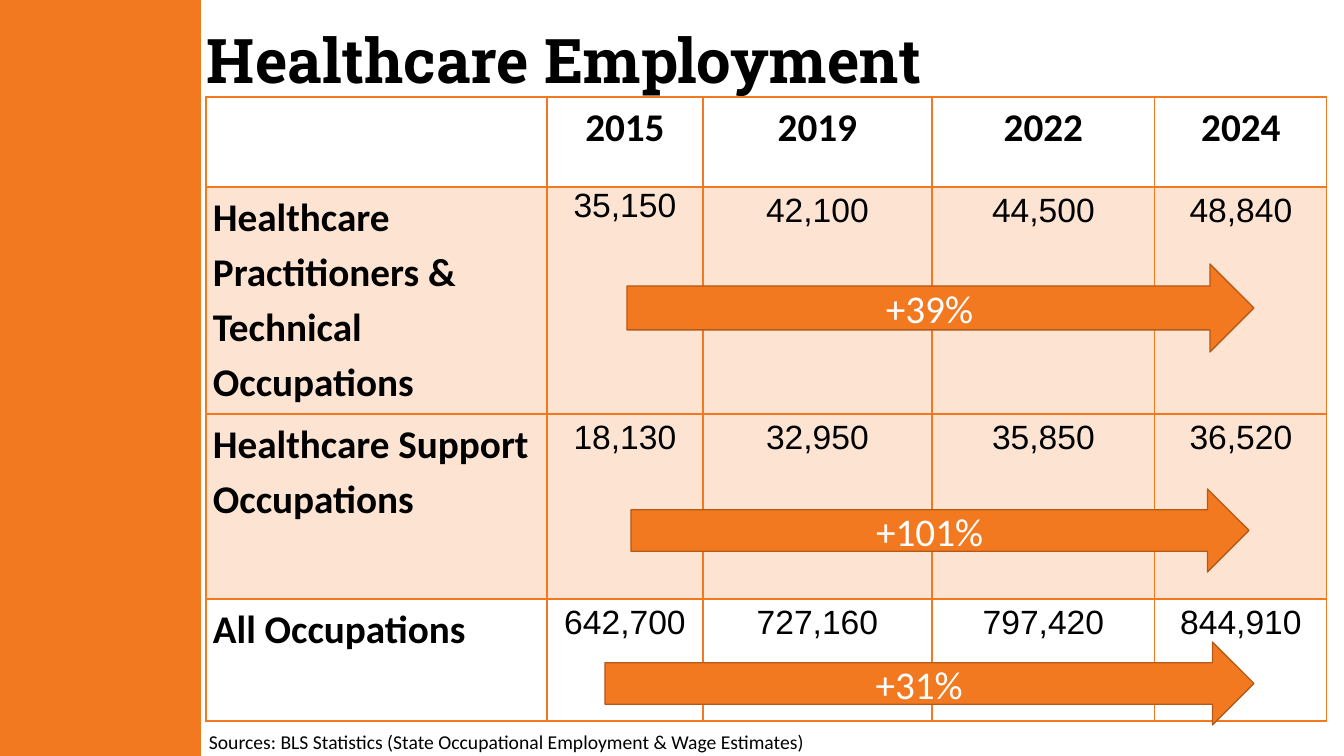
import lxml.etree
import pptx
import pptx.dml.color
import pptx.enum.shapes
import pptx.enum.text
import pptx.oxml.ns
import pptx.util

EMU_PER_PX = 914400 / 100.8
ORANGE, DARK_ORANGE, PEACH = "F37920", "B45A18", "FDE4D2"
BLACK, WHITE = "000000", "FFFFFF"
CENTER = pptx.enum.text.PP_ALIGN.CENTER
LEFT = pptx.enum.text.PP_ALIGN.LEFT
MIDDLE = pptx.enum.text.MSO_ANCHOR.MIDDLE
TOP = pptx.enum.text.MSO_ANCHOR.TOP
SHAPES = pptx.enum.shapes.MSO_SHAPE


def px(length):
    return pptx.util.Emu(round(length * EMU_PER_PX))


def color(value):
    return pptx.dml.color.RGBColor.from_string(value)


class SlideBuilder:
    def __init__(self, slide, font="Calibri"):
        self.slide = slide
        self.font = font

    def set_text(self, frame, text, size, font=None, bold=False, ink=BLACK,
                 align=LEFT, spacing=1.0):
        paragraph = frame.paragraphs[0]
        paragraph.text = text
        paragraph.alignment = align
        paragraph.line_spacing = spacing
        paragraph.font.name = font or self.font
        paragraph.font.size = pptx.util.Pt(size)
        paragraph.font.bold = bold
        paragraph.font.color.rgb = color(ink)

    def text(self, bounds, text, size, anchor=TOP, **style):
        box = self.slide.shapes.add_textbox(*map(px, bounds))
        box.text_frame.word_wrap = True
        box.text_frame.vertical_anchor = anchor
        self.set_text(box.text_frame, text, size, **style)

    def shape(self, kind, bounds, fill, line=None):
        shape = self.slide.shapes.add_shape(kind, *map(px, bounds))
        shape.shadow.inherit = False
        shape.fill.solid()
        shape.fill.fore_color.rgb = color(fill)
        if line:
            shape.line.color.rgb = color(line)
            shape.line.width = pptx.util.Pt(1)
        else:
            shape.line.fill.background()
        return shape

    def growth_arrow(self, bounds, label):
        arrow = self.shape(SHAPES.RIGHT_ARROW, bounds, ORANGE, DARK_ORANGE)
        arrow.text_frame.vertical_anchor = MIDDLE
        self.set_text(arrow.text_frame, label, 28, ink=WHITE, align=CENTER)

    def borders(self, cell, **widths):
        properties = cell._tc.get_or_add_tcPr()
        qn = pptx.oxml.ns.qn
        # Border lines come before the fill in the cell properties
        for index, (side, width) in enumerate(widths.items()):
            line = lxml.etree.Element(qn(f"a:ln{side}"),
                                      w=str(int(pptx.util.Pt(width))))
            fill = lxml.etree.SubElement(line, qn("a:solidFill"))
            lxml.etree.SubElement(fill, qn("a:srgbClr"), val=ORANGE)
            properties.insert(index, line)

    def table(self, left, top, widths, heights, rows, fills):
        bounds = left, top, sum(widths), sum(heights)
        table = self.slide.shapes.add_table(
            len(rows), len(widths), *map(px, bounds)).table
        table.first_row = table.horz_banding = False
        for column, width in zip(table.columns, widths):
            column.width = px(width)
        for row, height in zip(table.rows, heights):
            row.height = px(height)
        for r, (values, fill) in enumerate(zip(rows, fills)):
            for c, value in enumerate(values):
                cell = table.cell(r, c)
                cell.margin_left = cell.margin_right = px(7)
                cell.margin_top = cell.margin_bottom = 0
                if fill:
                    cell.fill.solid()
                    cell.fill.fore_color.rgb = color(fill)
                else:
                    cell.fill.background()
                self.borders(cell, L=1, R=1, T=2 if r == 1 else 1,
                             B=2 if r == 0 else 1)
                heading = r == 0 or c == 0
                self.set_text(cell.text_frame, value,
                              size=28 if heading else 24,
                              font=None if heading else "Arial",
                              bold=heading,
                              align=CENTER if c else LEFT,
                              spacing=1.0 if (r, c) == (1, 1) else 1.15)


def main():
    deck = pptx.Presentation()
    deck.slide_width, deck.slide_height = px(1344), px(756)
    page = SlideBuilder(deck.slides.add_slide(deck.slide_layouts[6]))

    # Side band and title
    page.shape(SHAPES.RECTANGLE, (0, 0, 201, 757), ORANGE)
    page.text((197, -9, 1064, 146), "Healthcare Employment", 44,
              anchor=MIDDLE, font="Roboto Slab", bold=True, spacing=0.9)

    # Employment by year
    page.table(
        206, 97, [341, 156, 229, 223, 172], [90, 227, 185, 122],
        [["", "2015", "2019", "2022", "2024"],
         ["Healthcare Practitioners & Technical Occupations",
          "35,150", "42,100", "44,500", "48,840"],
         ["Healthcare Support Occupations",
          "18,130", "32,950", "35,850", "36,520"],
         ["All Occupations", "642,700", "727,160", "797,420", "844,910"]],
        [None, PEACH, PEACH, WHITE])

    # Source line
    page.text(
        (199, 725, 1107, 34),
        "Sources: BLS Statistics (State Occupational Employment & Wage Estimates)",
        14)

    # Growth arrows
    for bounds, label in [((627, 264, 627, 88), "+39%"),
                          ((631, 489, 618, 83), "+101%"),
                          ((605, 642, 649, 83), "+31%")]:
        page.growth_arrow(bounds, label)

    deck.save("out.pptx")


if __name__ == "__main__":
    main()
